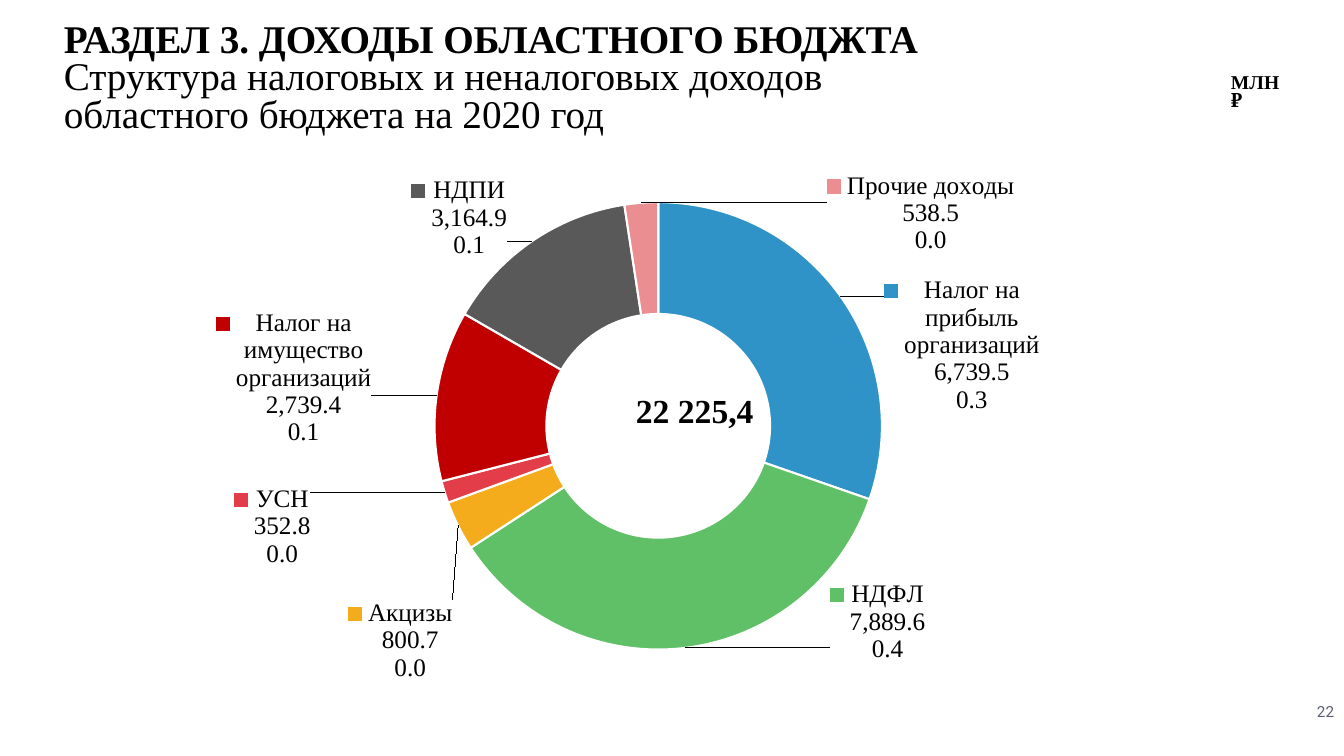
from math import cos, pi, sin

from pptx import Presentation
from pptx.chart.data import CategoryChartData
from pptx.dml.color import RGBColor
from pptx.enum.chart import XL_CHART_TYPE
from pptx.enum.text import MSO_ANCHOR, PP_ALIGN
from pptx.oxml import parse_xml
from pptx.oxml.ns import nsdecls, qn
from pptx.util import Emu, Pt

COLOURS = {
    "black": "000000", "white": "FFFFFF", "grey": "595F6F",
    "blue": "2F93C7", "green": "60C067", "amber": "F4AC1C", "red": "E33D49",
    "crimson": "C00000", "charcoal": "595959", "pink": "EA8E92",
}
SERIF = "Times New Roman"

INCOMES = [
    ("Налог на прибыль организаций", 6739.5, "blue", (961, 345)),
    ("НДФЛ", 7889.6, "green", (877, 622)),
    ("Акцизы", 800.7, "amber", (400, 641)),
    ("УСН", 352.8, "red", (272, 527)),
    ("Налог на имущество организаций", 2739.4, "crimson", (293, 378)),
    ("НДПИ", 3164.9, "charcoal", (459, 218)),
    ("Прочие доходы", 538.5, "pink", (920, 213)),
]
TITLE = [
    ("РАЗДЕЛ 3. ДОХОДЫ ОБЛАСТНОГО БЮДЖТА", True),
    ("Структура налоговых и неналоговых доходов", False),
    ("областного бюджета на 2020 год", False),
]

LABEL_CONTENT = (
    '<c:numFmt formatCode="#,##0.0" sourceLinked="0"/>'
    '<c:showLegendKey val="1"/><c:showVal val="1"/><c:showCatName val="1"/>'
    '<c:showSerName val="0"/><c:showPercent val="1"/><c:showBubbleSize val="0"/>'
    "<c:separator>\n</c:separator>"
)


def px(length):
    return Emu(round(length * 914400 / 100.8))


def colour(name):
    return RGBColor.from_string(COLOURS[name])


class SlideBuilder:
    def __init__(self, page):
        self.page = page

    def text(self, at, lines, size, font=SERIF, fill="black", spacing=None,
             align=PP_ALIGN.LEFT, anchor=MSO_ANCHOR.TOP, wrap=True):
        box = self.page.shapes.add_textbox(*map(px, at))
        frame = box.text_frame
        frame.word_wrap = wrap
        frame.vertical_anchor = anchor
        frame.text = "\n".join(line for line, bold in lines)
        for para, (line, bold) in zip(frame.paragraphs, lines):
            para.alignment = align
            para.line_spacing = spacing
            for span in para.runs:
                span.font.name = font
                span.font.size = Pt(size)
                span.font.bold = bold
                span.font.color.rgb = colour(fill)

    def doughnut(self, at, centre, radius, incomes):
        data = CategoryChartData(number_format="#,##0.0")
        data.categories = [name for name, *rest in incomes]
        data.add_series("Доходы", [value for name, value, *rest in incomes])
        chart = self.page.shapes.add_chart(
            XL_CHART_TYPE.DOUGHNUT, *map(px, at), data).chart
        chart.has_legend = False
        chart.has_title = False
        chart.font.name = SERIF
        chart.font.size = Pt(18)
        chart.font.color.rgb = colour("black")
        plot = chart.plots[0]
        plot.vary_by_categories = True
        series = plot.series[0]
        for index, (name, value, fill, place) in enumerate(incomes):
            style = series.points[index].format
            style.fill.solid()
            style.fill.fore_color.rgb = colour(fill)
            style.line.color.rgb = colour("white")
            style.line.width = Pt(1.5)
        self.place_ring(chart, at, centre, radius)
        self.place_labels(series, at, centre, radius, incomes)

    def place_ring(self, chart, at, centre, radius):
        left, top, width, height = at
        area = chart.plots[0]._element.getparent()
        for layout in area.findall(qn("c:layout")):
            area.remove(layout)
        area.insert(0, parse_xml(
            f'<c:layout {nsdecls("c")}><c:manualLayout>'
            '<c:layoutTarget val="inner"/>'
            '<c:xMode val="edge"/><c:yMode val="edge"/>'
            f'<c:x val="{(centre[0] - radius - left) / width:.3f}"/>'
            f'<c:y val="{(centre[1] - radius - top) / height:.3f}"/>'
            f'<c:w val="{2 * radius / width:.3f}"/>'
            f'<c:h val="{2 * radius / height:.3f}"/>'
            "</c:manualLayout></c:layout>"))
        area.find(".//" + qn("c:holeSize")).set("val", "40")

    def place_labels(self, series, at, centre, radius, incomes):
        width, height = at[2:]
        total = sum(value for name, value, *rest in incomes)
        passed = 0
        labels = ""
        for index, (name, value, fill, (x, y)) in enumerate(incomes):
            angle = 2 * pi * (passed + value / 2) / total
            passed += value
            shift_x = x - centre[0] - 0.75 * radius * sin(angle)
            shift_y = y - centre[1] + 0.75 * radius * cos(angle)
            labels += (
                f'<c:dLbl><c:idx val="{index}"/><c:layout><c:manualLayout>'
                f'<c:x val="{shift_x / width:.3f}"/>'
                f'<c:y val="{shift_y / height:.3f}"/>'
                f"</c:manualLayout></c:layout>{LABEL_CONTENT}</c:dLbl>")
        series._element.find(qn("c:cat")).addprevious(parse_xml(
            f'<c:dLbls {nsdecls("c")}>{labels}{LABEL_CONTENT}</c:dLbls>'))


def main():
    deck = Presentation()
    deck.slide_width, deck.slide_height = px(1344), px(756)
    builder = SlideBuilder(deck.slides.add_slide(deck.slide_layouts[6]))
    builder.text((1305, 691, 39, 40), [("22", False)], 10.9, font="Roboto",
                 fill="grey", align=PP_ALIGN.RIGHT, anchor=MSO_ANCHOR.MIDDLE)
    builder.doughnut((74, 108, 1190, 615), (658, 426), 224, INCOMES)
    builder.text((54, 18, 1250, 124), TITLE, 28, spacing=0.8)
    builder.text((1221, 69, 84, 29), [("МЛН ₽", True)], 14, spacing=0.8)
    builder.text((626, 385, 139, 50), [("22 225,4", True)], 24, wrap=False)
    deck.save("out.pptx")


if __name__ == "__main__":
    main()
